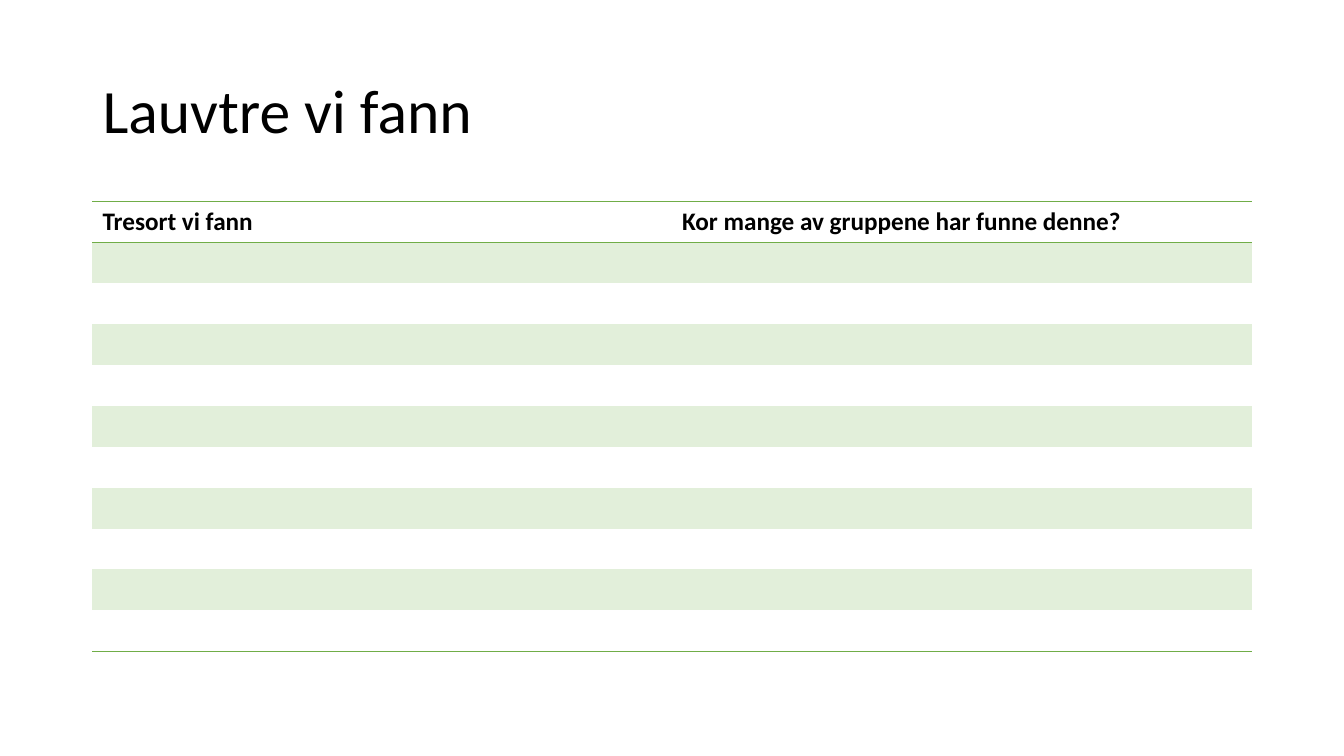
from lxml.etree import SubElement
from pptx import Presentation
from pptx.dml.color import RGBColor
from pptx.enum.text import MSO_ANCHOR as ANCHOR, MSO_AUTO_SIZE as AUTO_SIZE, PP_ALIGN as ALIGN
from pptx.oxml.ns import qn
from pptx.util import Cm, Pt

BLACK = RGBColor(0x00, 0x00, 0x00)
GREEN = RGBColor(0x70, 0xAD, 0x47)
PALE_GREEN = RGBColor(0xE2, 0xEF, 0xDA)
FONT = "Calibri"
PLAIN_STYLE = "{2D5ABB26-0587-4C30-8999-92F81FD0307C}"
HEADINGS = ["Tresort vi fann", "Kor mange av gruppene har funne denne?"]
TREE_ROWS = 10


def format_font(font, size, bold):
    for name, value in {"name": FONT, "size": Pt(size), "bold": bold}.items():
        setattr(font, name, value)
    font.color.rgb = BLACK


def add_border(cell, side):
    ln = SubElement(cell._tc.get_or_add_tcPr(), qn(f"a:{side}"), w=str(Pt(1)))
    fill = SubElement(ln, qn("a:solidFill"))
    SubElement(fill, qn("a:srgbClr"), val=str(GREEN))


def place_title(s, text, left, top, width, height):
    sp = s.shapes.title
    box = {"left": left, "top": top, "width": width, "height": height}
    for name, value in box.items():
        setattr(sp, name, Cm(value))
    tf = sp.text_frame
    settings = {"word_wrap": True, "auto_size": AUTO_SIZE.NONE,
                "vertical_anchor": ANCHOR.MIDDLE}
    for name, value in settings.items():
        setattr(tf, name, value)
    p = tf.paragraphs[0]
    p.alignment = ALIGN.LEFT
    p.line_spacing = 0.9
    r = p.add_run()
    r.text = text
    format_font(r.font, 44, False)


def place_tree_table(s, left, top, width, height):
    rows = TREE_ROWS + 1
    frame = s.shapes.add_table(rows, len(HEADINGS), Cm(left), Cm(top), Cm(width), Cm(height))
    table = frame.table
    table.first_row = table.horz_banding = False
    table._tbl.tblPr.find(qn("a:tableStyleId")).text = PLAIN_STYLE
    for col, heading in enumerate(HEADINGS):
        header = table.cell(0, col)
        r = header.text_frame.paragraphs[0].add_run()
        r.text = heading
        format_font(r.font, 18, True)
        add_border(header, "lnT")
        add_border(header, "lnB")
        add_border(table.cell(TREE_ROWS, col), "lnB")
        for row in range(rows):
            fill = table.cell(row, col).fill
            if row % 2:
                fill.solid()
                fill.fore_color.rgb = PALE_GREEN
            else:
                fill.background()


def main():
    prs = Presentation()
    prs.slide_width, prs.slide_height = Cm(33.87), Cm(19.05)
    s = prs.slides.add_slide(prs.slide_layouts[5])
    left, width = 2.33, 29.21
    place_title(s, "Lauvtre vi fann", left, 1.01, width, 3.68)
    place_tree_table(s, left, 5.08, width, 11.33)
    prs.save("out.pptx")


if __name__ == "__main__":
    main()
